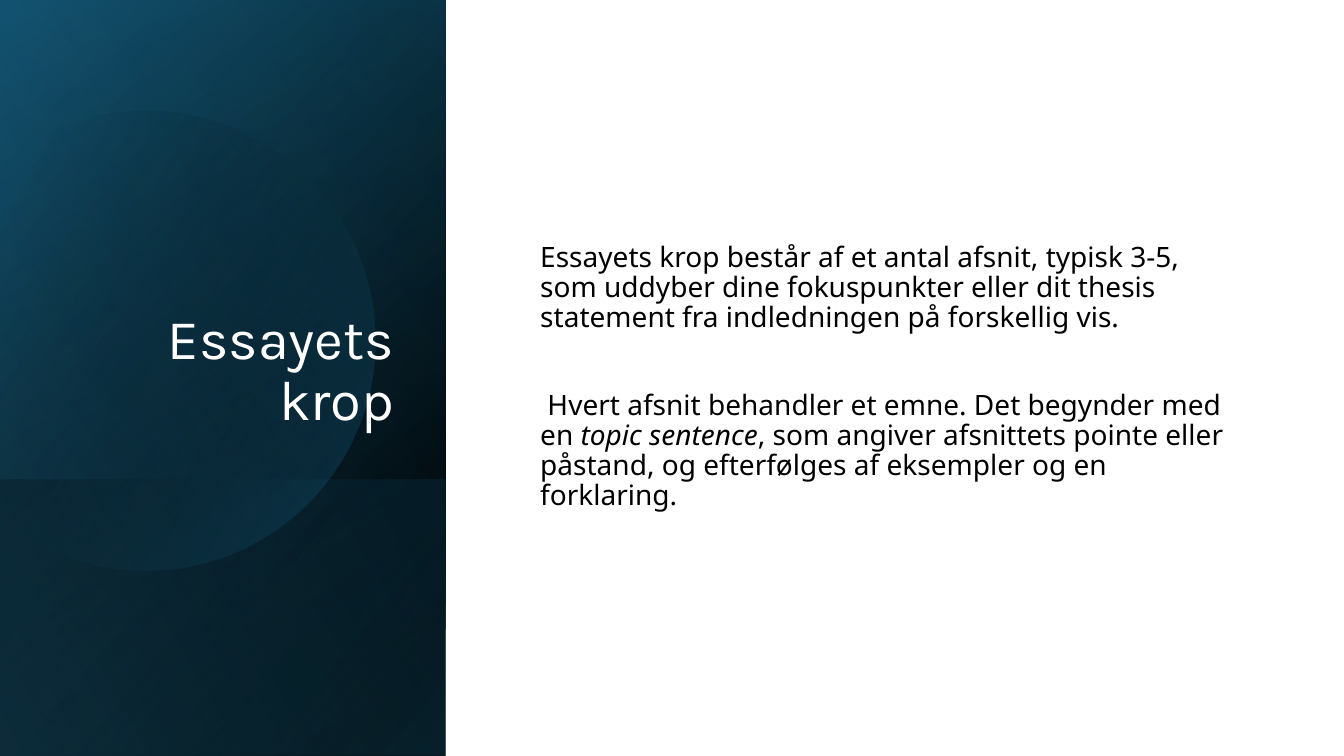
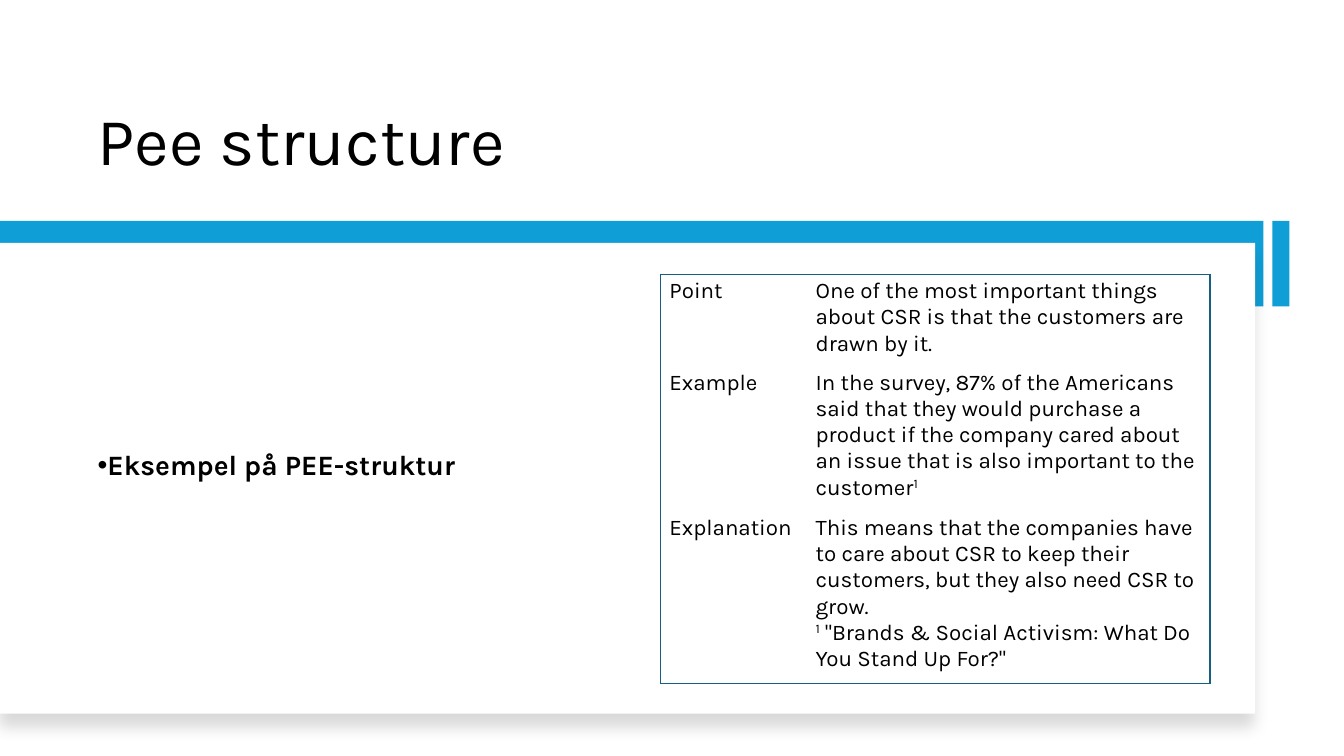
import math
from dataclasses import dataclass

from pptx import Presentation
from pptx.dml.color import RGBColor
from pptx.enum.shapes import MSO_SHAPE
from pptx.enum.text import MSO_ANCHOR, MSO_AUTO_SIZE, PP_ALIGN
from pptx.oxml import parse_xml
from pptx.oxml.ns import nsdecls, qn
from pptx.util import Inches, Pt

RECT = MSO_SHAPE.RECTANGLE
BOTTOM, MIDDLE = MSO_ANCHOR.BOTTOM, MSO_ANCHOR.MIDDLE
LEFT, RIGHT = PP_ALIGN.LEFT, PP_ALIGN.RIGHT
NO_FIT = MSO_AUTO_SIZE.NONE

COLORS = {
    "black": "000000",
    "white": "FFFFFF",
    "navy": "104862",
    "teal": "156082",
    "sky": "46B1E1",
    "blue": "0F9ED5",
}
HEAD_FONT, BODY_FONT = "Karla", "Noto Sans"
LINE_SPACING = 0.9
TITLE_ONLY = 5
SIDE_WIDTH, SLIDE_HEIGHT = 4.42, 7.5


@dataclass
class Box:
    left: float
    top: float
    width: float
    height: float

    def lengths(self) -> tuple:
        return tuple(Inches(v) for v in (self.left, self.top, self.width, self.height))


@dataclass
class Run:
    text: str
    bold: bool = False
    italic: bool = False
    raised: bool = False


@dataclass
class Stop:
    position: int
    color: str
    alpha: int = 100


@dataclass
class SidePanel:
    top: float
    stops: list
    angle: int
    flipped: bool = True


# Content
SIDE_PANELS = [
    SidePanel(0, [Stop(8, "black"), Stop(100, "navy")], 50),
    SidePanel(0, [Stop(0, "black", 0), Stop(99, "teal", 46)], 30),
    SidePanel(4.76, [Stop(2, "teal", 29), Stop(100, "black", 30)], 130, False),
]
GLOW_PANEL = SidePanel(0, [Stop(0, "black", 0), Stop(99, "sky", 11)], 120)
DISC_STOPS = [Stop(10, "black", 0), Stop(100, "teal", 43)]

BODY = [
    [Run("Essayets krop består af et antal afsnit, typisk 3-5, som uddyber dine "
         "fokuspunkter eller dit thesis statement fra indledningen på forskellig vis.")],
    [Run(" Hvert afsnit behandler et emne. Det begynder med en "),
     Run("topic sentence", italic=True),
     Run(", som angiver afsnittets pointe eller påstand, og efterfølges af "
         "eksempler og en forklaring.")],
]

COL_WIDTHS, ROW_HEIGHTS = [1.45, 4.0], [0.91, 1.44, 1.71]
PEE_ROWS = [
    ("Point", [[Run("One of the most important things about CSR is that the "
                    "customers are drawn by it.")]]),
    ("Example", [[Run("In the survey, 87% of the Americans said that they would "
                      "purchase a product if the company cared about an issue that "
                      "is also important to the customer"),
                  Run("1", raised=True)]]),
    ("Explanation", [[Run("This means that the companies have to care about CSR to "
                          "keep their customers, but they also need CSR to grow.")],
                     [Run("1", raised=True),
                      Run(' "Brands & Social Activism: What Do You Stand Up For?"')]]),
]


# Shared helpers
def rgb(name: str) -> RGBColor:
    return RGBColor.from_string(COLORS[name])


def add_runs(p, runs: list, size: int, font: str, color: str = "black") -> None:
    for run in runs:
        r = p.add_run()
        r.text = run.text
        r.font.size, r.font.name = Pt(size), font
        r.font.bold, r.font.italic = run.bold, run.italic
        r.font.color.rgb = rgb(color)
        if run.raised:
            r._r.get_or_add_rPr().set("baseline", "30000")


def add_paragraphs(tf, paragraphs: list, size: int, font: str) -> None:
    for i, runs in enumerate(paragraphs):
        p = tf.add_paragraph() if i else tf.paragraphs[0]
        add_runs(p, runs, size, font)


def add_title(s, box: Box, text: str, size: int, color: str = "black", align=LEFT) -> None:
    title = s.shapes.title
    title.left, title.top, title.width, title.height = box.lengths()
    tf = title.text_frame
    tf.word_wrap, tf.auto_size, tf.vertical_anchor = True, NO_FIT, BOTTOM
    p = tf.paragraphs[0]
    p.alignment, p.line_spacing = align, LINE_SPACING
    add_runs(p, [Run(text)], size, HEAD_FONT, color)
    # Bring the title in front of the shapes drawn so far
    title.element.getparent().append(title.element)


def add_textbox(s, box: Box):
    tf = s.shapes.add_textbox(*box.lengths()).text_frame
    tf.word_wrap, tf.auto_size, tf.vertical_anchor = True, NO_FIT, MIDDLE
    return tf


def add_rect(s, box: Box, color: str):
    sp = s.shapes.add_shape(RECT, *box.lengths())
    sp.shadow.inherit = False
    sp.fill.solid()
    sp.fill.fore_color.rgb = rgb(color)
    sp.line.fill.background()
    return sp


def set_gradient(sp, stops: list, angle: int) -> None:
    stops_xml = "".join(
        f'<a:gs pos="{g.position * 1000}"><a:srgbClr val="{COLORS[g.color]}">'
        f'<a:alpha val="{g.alpha * 1000}"/></a:srgbClr></a:gs>' for g in stops)
    sp.fill.background()
    sppr = sp.element.spPr
    sppr.replace(sppr.find(qn("a:noFill")), parse_xml(
        f'<a:gradFill {nsdecls("a")} rotWithShape="1"><a:gsLst>{stops_xml}</a:gsLst>'
        f'<a:lin ang="{angle * 60000}" scaled="0"/></a:gradFill>'))


# Slide 1 parts
def add_side_panel(s, panel: SidePanel) -> None:
    # The frame lies on its side and is turned a quarter
    length = SLIDE_HEIGHT - panel.top
    shift = (length - SIDE_WIDTH) / 2
    sp = add_rect(s, Box(-shift, panel.top + shift, length, SIDE_WIDTH), "black")
    sp.rotation = 90
    if panel.flipped:
        sp.element.spPr.find(qn("a:xfrm")).set("flipH", "1")
    set_gradient(sp, panel.stops, panel.angle)


def add_disc(s, cx: float, cy: float, radius: float) -> None:
    # Circle cut off at the left edge of the slide
    limit, steps = math.acos(-cx / radius), 90
    angles = [limit * (2 * i / steps - 1) for i in range(steps + 1)]
    points = [(Inches(cx + radius * math.cos(a)), Inches(cy + radius * math.sin(a)))
              for a in angles]
    builder = s.shapes.build_freeform(*points[0])
    builder.add_line_segments(points[1:], close=True)
    sp = builder.convert_to_shape()
    sp.shadow.inherit = False
    sp.line.fill.background()
    set_gradient(sp, DISC_STOPS, 30)


def build_body_slide(prs) -> None:
    s = prs.slides.add_slide(prs.slide_layouts[TITLE_ONLY])
    for panel in SIDE_PANELS:
        add_side_panel(s, panel)
    add_disc(s, 1.44, 3.38, 2.28)
    add_side_panel(s, GLOW_PANEL)
    add_title(s, Box(0.51, 0.64, 3.5, 3.7), "Essayets krop", 40, "white", RIGHT)

    tf = add_textbox(s, Box(5.26, 0.71, 7.17, 6.07))
    add_paragraphs(tf, BODY, 20, BODY_FONT)
    for p in tf.paragraphs:
        p.line_spacing = LINE_SPACING
    tf.paragraphs[1].space_before = Pt(41)


# Slide 2 parts
def add_panel_shadow(sp) -> None:
    effects = sp.element.spPr.find(qn("a:effectLst"))
    effects.append(parse_xml(
        f'<a:outerShdw {nsdecls("a")} blurRad="{Pt(11)}" dist="{Pt(10)}" dir="5400000" '
        f'algn="t" rotWithShape="0"><a:srgbClr val="{COLORS["black"]}">'
        '<a:alpha val="15000"/></a:srgbClr></a:outerShdw>'))


def add_bullet(s, box: Box, text: str) -> None:
    tf = add_textbox(s, box)
    tf.margin_bottom = Inches(0.45)
    p = tf.paragraphs[0]
    ppr = p._p.get_or_add_pPr()
    ppr.set("marL", "0")
    ppr.set("indent", str(-Inches(0.25)))
    ppr.append(parse_xml(f'<a:buFont {nsdecls("a")} typeface="Arial"/>'))
    ppr.append(parse_xml(f'<a:buChar {nsdecls("a")} char="•"/>'))
    p.line_spacing = LINE_SPACING
    add_runs(p, [Run(text, bold=True)], 20, HEAD_FONT)


def add_borders(cell, outer_sides: str) -> None:
    tcpr = cell._tc.get_or_add_tcPr()
    line = f'<a:solidFill><a:srgbClr val="{COLORS["teal"]}"/></a:solidFill>'
    for side in "LRTB":
        fill = line if side in outer_sides else "<a:noFill/>"
        tcpr.append(parse_xml(
            f'<a:ln{side} {nsdecls("a")} w="{Pt(1)}">{fill}</a:ln{side}>'))


def add_pee_table(s, left: float, top: float) -> None:
    box = Box(left, top, sum(COL_WIDTHS), sum(ROW_HEIGHTS))
    table = s.shapes.add_table(len(PEE_ROWS), len(COL_WIDTHS), *box.lengths()).table
    table.first_row = table.horz_banding = False
    for column, width in zip(table.columns, COL_WIDTHS):
        column.width = Inches(width)
    last = len(PEE_ROWS) - 1
    for i, (label, paragraphs) in enumerate(PEE_ROWS):
        table.rows[i].height = Inches(ROW_HEIGHTS[i])
        for j, content in enumerate(([[Run(label)]], paragraphs)):
            cell = table.cell(i, j)
            cell.margin_left = cell.margin_right = Inches(0.09)
            cell.margin_top = cell.margin_bottom = Inches(0.04)
            # Only the outer frame is drawn
            add_borders(cell, "LR"[j] + "T" * (i == 0) + "B" * (i == last))
            cell.fill.background()
            add_paragraphs(cell.text_frame, content, 16, HEAD_FONT)


def build_pee_slide(prs) -> None:
    s = prs.slides.add_slide(prs.slide_layouts[TITLE_ONLY])
    add_title(s, Box(0.87, 0.42, 11.01, 1.42), "Pee structure", 48)
    add_rect(s, Box(0, 2.19, 12.53, 0.85), "blue")
    add_panel_shadow(add_rect(s, Box(0, 2.41, 12.45, 4.67), "white"))
    add_bullet(s, Box(0.87, 2.84, 4.96, 3.98), "Eksempel på PEE-struktur")
    add_rect(s, Box(12.62, 2.19, 0.17, 0.85), "blue")
    add_pee_table(s, 6.55, 2.72)


def main() -> None:
    prs = Presentation()
    prs.slide_width, prs.slide_height = Inches(13.33), Inches(SLIDE_HEIGHT)
    build_body_slide(prs)
    build_pee_slide(prs)
    prs.save("out.pptx")


if __name__ == "__main__":
    main()
